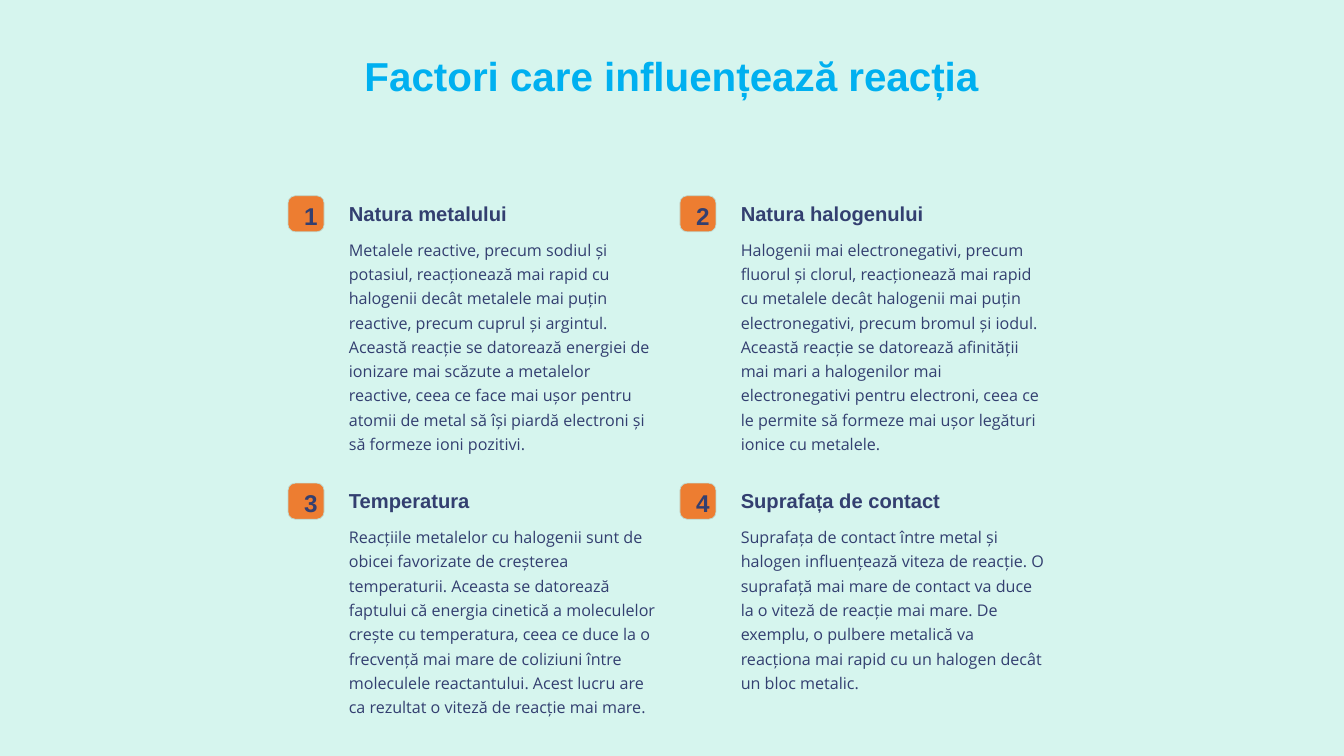
"""Build the slide on the factors that influence the reaction."""
from dataclasses import dataclass

from pptx import Presentation
from pptx.dml.color import RGBColor
from pptx.enum.shapes import MSO_SHAPE
from pptx.enum.text import PP_ALIGN
from pptx.util import Cm, Pt

RECTANGLE = MSO_SHAPE.RECTANGLE
ROUNDED_RECTANGLE = MSO_SHAPE.ROUNDED_RECTANGLE
LEFT = PP_ALIGN.LEFT
CENTER = PP_ALIGN.CENTER


@dataclass(frozen=True)
class TextStyle:
    font: str
    size: float
    line_spacing: float
    color: str
    bold: bool = True
    alignment: PP_ALIGN = LEFT
    wrap: bool = False


@dataclass(frozen=True)
class Theme:
    background: str = "D6F5EE"
    badge_fill: str = "ED7D31"
    badge_line: str = "BCDBD4"
    title: TextStyle = TextStyle("Arial", 34.6, 43.3, "00B0F0", alignment=CENTER, wrap=True)
    number: TextStyle = TextStyle("Arial", 20.8, 20.8, "333F70", alignment=CENTER)
    heading: TextStyle = TextStyle("Arial", 17.3, 21.6, "333F70")
    body: TextStyle = TextStyle("Open Sans", 13.8, 20.8, "333F70", bold=False, wrap=True)


@dataclass(frozen=True)
class Box:
    left: float
    top: float
    width: float
    height: float

    def lengths(self) -> tuple[Cm, Cm, Cm, Cm]:
        return Cm(self.left), Cm(self.top), Cm(self.width), Cm(self.height)


@dataclass(frozen=True)
class Factor:
    heading: str
    heading_width: float
    body: str
    body_lines: int


THEME = Theme()
SLIDE = Box(0, 0, 40.64, 22.86)
TITLE = Box(8.71, 1.35, 23.19, 3.05)
GRID_LEFT, GRID_TOP = 8.71, 5.92
COLUMN_PITCH, ROW_PITCH = 11.85, 8.69
COLUMNS = 2
BADGE_SIZE = 1.09
NUMBER_WIDTH = 0.61
BODY_LINE = 0.73

FACTORS = [
    Factor(
        "Natura metalului", 6.48,
        "Metalele reactive, precum sodiul și potasiul, reacționează mai rapid cu halogenii "
        "decât metalele mai puțin reactive, precum cuprul și argintul. Această reacție se "
        "datorează energiei de ionizare mai scăzute a metalelor reactive, ceea ce face mai "
        "ușor pentru atomii de metal să își piardă electroni și să formeze ioni pozitivi.", 9),
    Factor(
        "Natura halogenului", 7.34,
        "Halogenii mai electronegativi, precum fluorul și clorul, reacționează mai rapid cu "
        "metalele decât halogenii mai puțin electronegativi, precum bromul și iodul. Această "
        "reacție se datorează afinității mai mari a halogenilor mai electronegativi pentru "
        "electroni, ceea ce le permite să formeze mai ușor legături ionice cu metalele.", 9),
    Factor(
        "Temperatura", 6.1,
        "Reacțiile metalelor cu halogenii sunt de obicei favorizate de creșterea temperaturii. "
        "Aceasta se datorează faptului că energia cinetică a moleculelor crește cu temperatura, "
        "ceea ce duce la o frecvență mai mare de coliziuni între moleculele reactantului. Acest "
        "lucru are ca rezultat o viteză de reacție mai mare.", 8),
    Factor(
        "Suprafața de contact", 8.41,
        "Suprafața de contact între metal și halogen influențează viteza de reacție. O "
        "suprafață mai mare de contact va duce la o viteză de reacție mai mare. De exemplu, o "
        "pulbere metalică va reacționa mai rapid cu un halogen decât un bloc metalic.", 6),
]


def add_background(slide) -> None:
    """Cover the slide with the background colour."""
    shape = slide.shapes.add_shape(RECTANGLE, *SLIDE.lengths())
    shape.shadow.inherit = False
    shape.fill.solid()
    shape.fill.fore_color.rgb = RGBColor.from_string(THEME.background)
    shape.line.fill.background()


def add_badge(slide, box: Box) -> None:
    """Draw the rounded square behind a number."""
    shape = slide.shapes.add_shape(ROUNDED_RECTANGLE, *box.lengths())
    shape.adjustments[0] = 0.2
    shape.shadow.inherit = False
    shape.fill.solid()
    shape.fill.fore_color.rgb = RGBColor.from_string(THEME.badge_fill)
    shape.line.color.rgb = RGBColor.from_string(THEME.badge_line)
    shape.line.width = Pt(0.6)


def add_text(slide, box: Box, text: str, style: TextStyle) -> None:
    """Write one paragraph in the given style."""
    frame = slide.shapes.add_textbox(*box.lengths()).text_frame
    frame.word_wrap = style.wrap
    paragraph = frame.paragraphs[0]
    paragraph.text = text
    paragraph.alignment = style.alignment
    paragraph.line_spacing = Pt(style.line_spacing)
    paragraph.font.name = style.font
    paragraph.font.size = Pt(style.size)
    paragraph.font.bold = style.bold
    paragraph.font.color.rgb = RGBColor.from_string(style.color)


def add_factor(slide, index: int, factor: Factor) -> None:
    """Place one numbered factor in its grid cell."""
    row, column = divmod(index, COLUMNS)
    left = GRID_LEFT + column * COLUMN_PITCH
    top = GRID_TOP + row * ROW_PITCH
    text_left = left + 1.59
    number_left = left + (BADGE_SIZE - NUMBER_WIDTH) / 2
    add_badge(slide, Box(left, top, BADGE_SIZE, BADGE_SIZE))
    add_text(slide, Box(number_left, top + 0.18, NUMBER_WIDTH, 0.74), str(index + 1), THEME.number)
    add_text(slide, Box(text_left, top, factor.heading_width, 0.76), factor.heading, THEME.heading)
    body_box = Box(text_left, top + 1.07, 9.78, factor.body_lines * BODY_LINE)
    add_text(slide, body_box, factor.body, THEME.body)


def main() -> None:
    """Build and save the presentation."""
    presentation = Presentation()
    presentation.slide_width = Cm(SLIDE.width)
    presentation.slide_height = Cm(SLIDE.height)
    slide = presentation.slides.add_slide(presentation.slide_layouts[6])
    add_background(slide)
    add_text(slide, TITLE, "Factori care influențează reacția", THEME.title)
    for index, factor in enumerate(FACTORS):
        add_factor(slide, index, factor)
    presentation.save("out.pptx")


if __name__ == "__main__":
    main()
